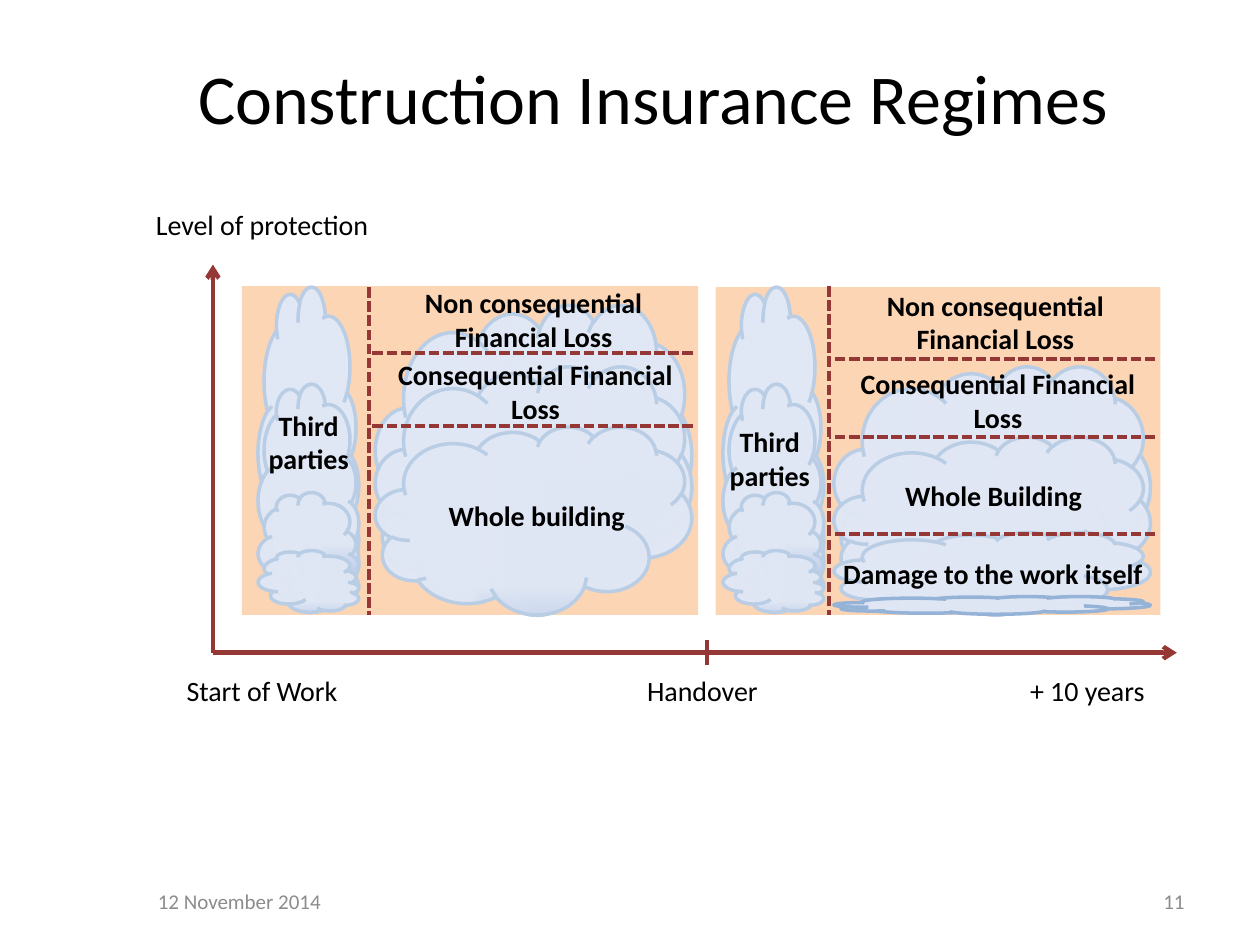
from dataclasses import dataclass
from pptx import Presentation
from pptx.dml.color import RGBColor
from pptx.enum.dml import MSO_LINE
from pptx.enum.shapes import MSO_CONNECTOR, MSO_SHAPE
from pptx.enum.text import MSO_ANCHOR as ANCHOR, PP_ALIGN as ALIGN
from pptx.oxml import parse_xml
from pptx.oxml.ns import nsdecls, qn
from pptx.util import Inches, Pt

COLUMNS, ROWS = 100, 75
CELL = Inches(0.1)
PANEL_FILL, AXIS_COLOR = "FCD5B5", "953735"
CLOUD_LINE, DARK_CLOUD_LINE = "B9CDE5", "95B3D7"
BLACK, GREY = "000000", "8C8C8C"
CLOUD_STOPS = [(0, "9AB5E4", 0), (50, "C2D1ED", 100), (100, "E1E8F5", 100)]
AXIS_LEFT, AXIS_BASE = 16.9, 51.8
LABEL_ROW, FOOTER_ROW = 53, 69.5
PARTY_HEIGHTS = [25.8, 18.1, 9.5, 4.9]
PARTY_WIDTH, PARTY_BASE = 8, 48.6
LOSS_WIDTH, LOSS_BASE = 25.1, 48.75


@dataclass
class Regime:
    panel: tuple
    party_center: float
    party_label: tuple
    loss_left: float
    loss_heights: list
    divider: tuple
    row_lines: list
    row_end: float
    labels: list


REGIMES = [
    Regime((19.2, 22.7, 36.2, 26.1), 24.5, (20.2, 31.9, 8.6, 6.4),
           29.8, [24.6, 19.7, 14.9], (29.3, 22.8), [28, 33.8], 55,
           [("Non consequential Financial Loss", (29.3, 22.2, 26.1, 6.4)),
            ("Consequential Financial Loss", (30.4, 27.9, 24.2, 6.4)),
            ("Whole building", (30.5, 39.1, 24.2, 3.7))]),
    Regime((56.8, 22.8, 35.3, 26), 61.4, (56.8, 33.2, 8.6, 6.4),
           66.2, [19.7, 14.1, 6.5, 1.4], (65.8, 22.7), [28.5, 34.7, 42.4], 91.7,
           [("Non consequential Financial Loss", (65.9, 22.4, 26.2, 6.4)),
            ("Consequential Financial Loss", (66.3, 28.6, 25.8, 6.4)),
            ("Whole Building", (65.9, 37.5, 25.9, 3.7)),
            ("Damage to the work itself", (65.1, 43.7, 27.4, 3.7))]),
]

AXIS_LABELS = [
    ("Level of protection", (10.8, 16, 20, 3.7)),
    ("Start of Work", (10.8, LABEL_ROW, 20, 3.7)),
    ("Handover", (47.3, LABEL_ROW, 16.9, 3.7)),
    ("+ 10 years", (76.3, LABEL_ROW, 20, 3.7)),
]


def color(value):
    return RGBColor.from_string(value)


def grid(*cells):
    return [round(CELL * cell) for cell in cells]


def add_panel(slide, box):
    shape = slide.shapes.add_shape(MSO_SHAPE.ROUNDED_RECTANGLE, *grid(*box))
    shape.adjustments[0] = 0
    shape.shadow.inherit = False
    shape.fill.solid()
    shape.fill.fore_color.rgb = color(PANEL_FILL)
    shape.line.fill.background()


def cloud_gradient():
    stops = "".join(
        f'<a:gs pos="{position * 1000}"><a:srgbClr val="{value}">'
        f'<a:alpha val="{alpha * 1000}"/></a:srgbClr></a:gs>'
        for position, value, alpha in CLOUD_STOPS)
    return parse_xml(
        f'<a:gradFill {nsdecls("a")} rotWithShape="1"><a:gsLst>{stops}</a:gsLst>'
        '<a:path path="rect"><a:fillToRect l="100000" t="100000"/></a:path></a:gradFill>')


def add_cloud(slide, box, line_color=CLOUD_LINE, rotation=0):
    shape = slide.shapes.add_shape(MSO_SHAPE.CLOUD, *grid(*box))
    shape.rotation = rotation
    shape.shadow.inherit = False
    shape.fill.background()
    properties = shape._element.spPr
    properties.replace(properties.find(qn("a:noFill")), cloud_gradient())
    shape.line.color.rgb = color(line_color)
    shape.line.width = Pt(2)


def add_line(slide, start, end, width=2.5, dashed=False, arrow=False):
    connector = slide.shapes.add_connector(MSO_CONNECTOR.STRAIGHT, *grid(*start, *end))
    connector.line.color.rgb = color(AXIS_COLOR)
    connector.line.width = Pt(width)
    if dashed:
        connector.line.dash_style = MSO_LINE.SQUARE_DOT
    if arrow:
        connector.line._get_or_add_ln().append(
            parse_xml(f'<a:tailEnd {nsdecls("a")} type="arrow"/>'))
    connector._element.spPr.append(parse_xml(f'<a:effectLst {nsdecls("a")}/>'))


def add_text(slide, text, box, size=16, bold=False, text_color=BLACK,
             align=ALIGN.CENTER, anchor=ANCHOR.TOP):
    frame = slide.shapes.add_textbox(*grid(*box)).text_frame
    frame.word_wrap = True
    frame.vertical_anchor = anchor
    frame.text = text
    formats = {"name": "Calibri", "size": Pt(size), "bold": bold}
    for paragraph in frame.paragraphs:
        paragraph.alignment = align
        for name, value in formats.items():
            setattr(paragraph.font, name, value)
        paragraph.font.color.rgb = color(text_color)


def add_regime(slide, regime):
    add_panel(slide, regime.panel)
    for height in PARTY_HEIGHTS:
        left = regime.party_center - height / 2
        top = PARTY_BASE - (height + PARTY_WIDTH) / 2
        add_cloud(slide, (left, top, height, PARTY_WIDTH), rotation=90)
    for height in regime.loss_heights:
        line_color = DARK_CLOUD_LINE if height < 2 else CLOUD_LINE
        add_cloud(slide, (regime.loss_left, LOSS_BASE - height, LOSS_WIDTH, height), line_color)

    column, top = regime.divider
    add_line(slide, (column, top), (column, 48.8), width=2, dashed=True)
    for row in regime.row_lines:
        add_line(slide, (regime.row_end, row), (column, row), width=2, dashed=True)
    add_text(slide, "Third\nparties", regime.party_label, bold=True)
    for text, box in regime.labels:
        add_text(slide, text, box, bold=True)


def add_axes(slide):
    origin = (AXIS_LEFT, AXIS_BASE)
    add_line(slide, origin, (AXIS_LEFT, 21), arrow=True)
    add_line(slide, origin, (93.4, AXIS_BASE), arrow=True)
    add_line(slide, (56.1, AXIS_BASE + 1), (56.1, AXIS_BASE - 1))
    for text, box in AXIS_LABELS:
        add_text(slide, text, box)


def main():
    presentation = Presentation()
    presentation.slide_width, presentation.slide_height = grid(COLUMNS, ROWS)
    slide = presentation.slides.add_slide(presentation.slide_layouts[6])

    add_text(slide, "Construction Insurance Regimes", (8.7, 1.4, 86.3, 12.5),
             size=40, anchor=ANCHOR.MIDDLE)
    for regime in REGIMES:
        add_regime(slide, regime)
    add_axes(slide)
    footer = {"size": 12, "text_color": GREY, "anchor": ANCHOR.MIDDLE}
    add_text(slide, "12 November 2014", (9.1, FOOTER_ROW, 19.8, 4), **footer)
    add_text(slide, "11", (71.7, FOOTER_ROW, 23.3, 4), align=ALIGN.RIGHT, **footer)

    presentation.save("out.pptx")


if __name__ == "__main__":
    main()
